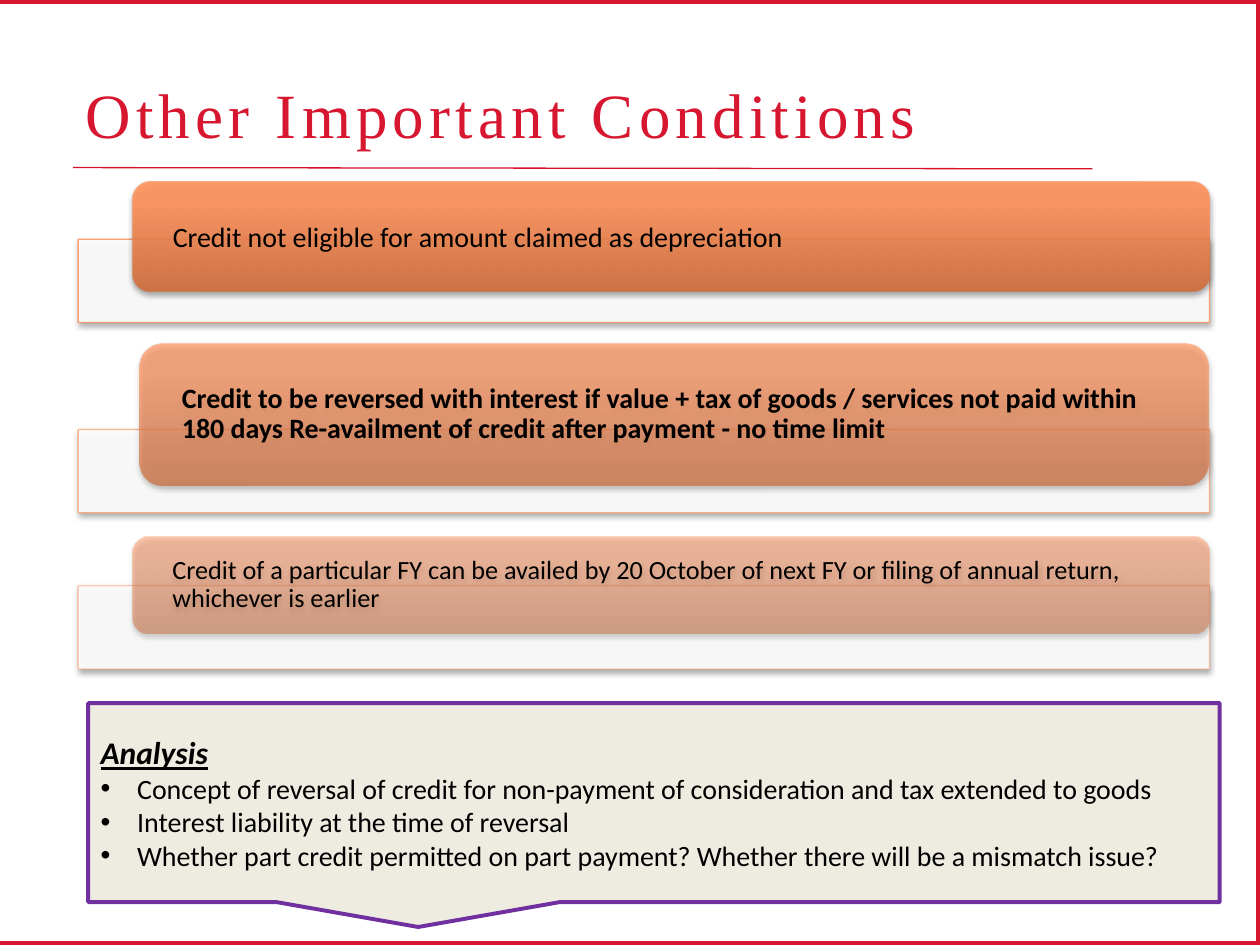
from lxml import etree
from pptx import Presentation
from pptx.dml.color import RGBColor
from pptx.enum.shapes import MSO_CONNECTOR, MSO_SHAPE
from pptx.enum.text import MSO_ANCHOR, PP_ALIGN
from pptx.oxml import parse_xml
from pptx.oxml.ns import nsdecls, qn
from pptx.util import Inches, Pt

RED = RGBColor(0xD7, 0x16, 0x2F)
RULE_RED = RGBColor(0xD7, 0x11, 0x2A)
ORANGE = RGBColor(0xFF, 0x99, 0x66)
WHITE = RGBColor(0xFF, 0xFF, 0xFF)
BLACK = RGBColor(0x00, 0x00, 0x00)
CREAM = RGBColor(0xEE, 0xEC, 0xE1)
PURPLE = RGBColor(0x70, 0x30, 0xA0)
CARD_GRADIENT = (
    (0, RGBColor(0xCF, 0x6C, 0x3B)),
    (80, RGBColor(0xFF, 0x92, 0x5B)),
    (100, RGBColor(0xFF, 0x93, 0x5D)),
)

CONDITIONS = (
    (1.9, (1.05, 1.44, 8.55, 0.87), 90, 16, False, 1.0,
     "Credit not eligible for amount claimed as depreciation"),
    (3.41, (1.11, 2.73, 8.48, 1.12), 70, 16, True, 0.9,
     "Credit to be reversed with interest if value + tax of goods / services "
     "not paid within 180 days Re-availment of credit after payment - no time limit"),
    (4.65, (1.05, 4.26, 8.55, 0.77), 50, 15, False, 0.9,
     "Credit of a particular FY can be availed by 20 October of next FY "
     "or filing of annual return, whichever is earlier"),
)
ANALYSIS_POINTS = (
    "Concept of reversal of credit for non-payment of consideration and tax extended to goods",
    "Interest liability at the time of reversal",
    "Whether part credit permitted on part payment? Whether there will be a mismatch issue?",
)


def add_panel(slide, preset, box):
    panel = slide.shapes.add_shape(preset, *map(Inches, box))
    panel.shadow.inherit = False
    return panel


def set_alpha(color_format_owner, percent):
    color = color_format_owner.find(".//" + qn("a:srgbClr"))
    etree.SubElement(color, qn("a:alpha")).set("val", str(percent * 1000))


def add_soft_shadow(panel):
    effects = panel._element.spPr.find(qn("a:effectLst"))
    effects.append(parse_xml(
        f'<a:outerShdw {nsdecls("a")} blurRad="{Pt(3.1)}" dist="{Pt(1.8)}" '
        'dir="5400000" rotWithShape="0"><a:srgbClr val="000000">'
        '<a:alpha val="35000"/></a:srgbClr></a:outerShdw>'))


def fill_gradient(panel, opacity):
    panel.fill.gradient()
    gradient = panel._element.spPr.find(qn("a:gradFill"))
    stops = "".join(
        f'<a:gs pos="{position * 1000}"><a:srgbClr val="{color}">'
        f'<a:alpha val="{opacity * 1000}"/></a:srgbClr></a:gs>'
        for position, color in CARD_GRADIENT)
    gradient.replace(
        gradient.find(qn("a:gsLst")),
        parse_xml(f'<a:gsLst {nsdecls("a")}>{stops}</a:gsLst>'))
    panel.fill.gradient_angle = 90


def add_run(paragraph, text, size, color=BLACK, font="Calibri", bold=False):
    run = paragraph.add_run()
    run.text = text
    run.font.name = font
    run.font.size = Pt(size)
    run.font.bold = bold
    run.font.color.rgb = color
    return run


def add_bullet(paragraph, indent):
    properties = paragraph._p.get_or_add_pPr()
    properties.set("marL", str(Inches(indent)))
    properties.set("indent", str(-Inches(indent)))
    etree.SubElement(properties, qn("a:buFont")).set("typeface", "Arial")
    etree.SubElement(properties, qn("a:buChar")).set("char", "•")


def add_frame(slide):
    rule = slide.shapes.add_connector(
        MSO_CONNECTOR.STRAIGHT,
        Inches(0.58), Inches(1.33), Inches(8.67), Inches(1.34))
    rule.line.color.rgb = RULE_RED
    rule.line.width = Pt(0.75)
    etree.SubElement(rule._element.spPr, qn("a:effectLst"))
    border = add_panel(slide, MSO_SHAPE.RECTANGLE, (-0.04, 0, 10.04, 7.5))
    border.fill.background()
    border.line.color.rgb = RED
    border.line.width = Pt(4.5)


def add_title(slide, text):
    title = slide.shapes.add_textbox(*map(Inches, (0.58, 0.3, 8.08, 0.95)))
    frame = title.text_frame
    frame.word_wrap = True
    frame.vertical_anchor = MSO_ANCHOR.BOTTOM
    run = add_run(frame.paragraphs[0], text, 36, RED, "Times New Roman")
    run.font._element.set("spc", "300")


def add_condition(slide, tray_top, card_box, opacity, size, bold, spacing, text):
    tray = add_panel(slide, MSO_SHAPE.RECTANGLE, (0.62, tray_top, 8.98, 0.66))
    tray.fill.solid()
    tray.fill.fore_color.rgb = WHITE
    set_alpha(tray._element.spPr.find(qn("a:solidFill")), 90)
    tray.line.color.rgb = ORANGE
    tray.line.width = Pt(0.75)
    set_alpha(tray._element.spPr.find(qn("a:ln")), opacity)
    add_soft_shadow(tray)

    card = add_panel(slide, MSO_SHAPE.ROUNDED_RECTANGLE, card_box)
    fill_gradient(card, opacity)
    card.line.fill.background()
    add_soft_shadow(card)
    frame = card.text_frame
    frame.word_wrap = True
    frame.vertical_anchor = MSO_ANCHOR.MIDDLE
    frame.margin_left = frame.margin_right = Inches(0.28)
    frame.margin_top = frame.margin_bottom = 0
    paragraph = frame.paragraphs[0]
    paragraph.alignment = PP_ALIGN.LEFT
    paragraph.line_spacing = spacing
    add_run(paragraph, text, size, bold=bold)


def add_analysis(slide, heading, points):
    callout = add_panel(slide, MSO_SHAPE.RECTANGULAR_CALLOUT, (0.7, 5.58, 8.98, 1.58))
    callout.fill.solid()
    callout.fill.fore_color.rgb = CREAM
    callout.line.color.rgb = PURPLE
    callout.line.width = Pt(2.25)
    frame = callout.text_frame
    frame.word_wrap = True
    frame.vertical_anchor = MSO_ANCHOR.MIDDLE
    first = frame.paragraphs[0]
    first.alignment = PP_ALIGN.LEFT
    heading_run = add_run(first, heading, 18, bold=True)
    heading_run.font.italic = True
    heading_run.font.underline = True
    for point in points:
        paragraph = frame.add_paragraph()
        paragraph.alignment = PP_ALIGN.LEFT
        add_bullet(paragraph, 0.29)
        add_run(paragraph, point, 16)


def main():
    presentation = Presentation()
    presentation.slide_width = Inches(10)
    presentation.slide_height = Inches(7.5)
    slide = presentation.slides.add_slide(presentation.slide_layouts[6])
    add_frame(slide)
    add_title(slide, "Other Important Conditions")
    for condition in CONDITIONS:
        add_condition(slide, *condition)
    add_analysis(slide, "Analysis", ANALYSIS_POINTS)
    presentation.save("out.pptx")


if __name__ == "__main__":
    main()
